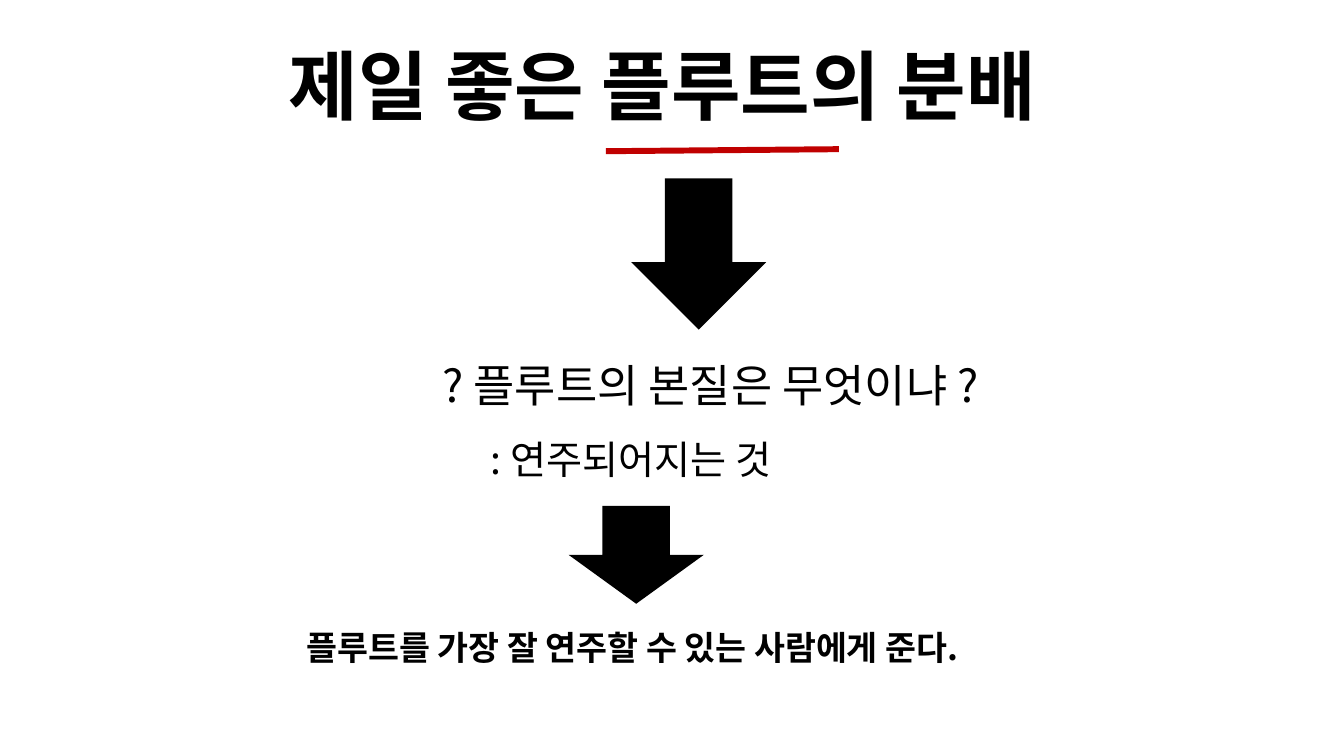
from pptx import Presentation
from pptx.dml.color import RGBColor
from pptx.enum.shapes import MSO_CONNECTOR, MSO_SHAPE
from pptx.enum.text import MSO_ANCHOR, PP_ALIGN
from pptx.oxml.ns import qn
from pptx.util import Inches, Pt
from lxml import etree

DOWN_ARROW = MSO_SHAPE.DOWN_ARROW
STRAIGHT = MSO_CONNECTOR.STRAIGHT
TOP, MIDDLE = MSO_ANCHOR.TOP, MSO_ANCHOR.MIDDLE
LEFT, CENTER = PP_ALIGN.LEFT, PP_ALIGN.CENTER

FONT = "Noto Sans CJK KR"
COLORS = {"ink": "000000", "underline": "C00000"}

prs = Presentation()
prs.slide_width, prs.slide_height = Inches(13.33), Inches(7.5)
slide = prs.slides.add_slide(prs.slide_layouts[6])
ink = RGBColor.from_string(COLORS["ink"])

# Title, question, answer and conclusion
statements = [
    ("제일 좋은 플루트의 분배", (0.82, 0.17, 11.5, 1.45), MIDDLE,
     {"alignment": CENTER, "line_spacing": 0.9}, {"size": Pt(54), "bold": True}),
    ("? 플루트의 본질은 무엇이냐 ?", (4.29, 3.5, 6.63, 0.64), TOP,
     {"alignment": LEFT}, {"size": Pt(32), "bold": False}),
    (": 연주되어지는 것", (4.77, 4.27, 4.08, 0.57), TOP,
     {"alignment": LEFT}, {"size": Pt(28), "bold": False}),
    ("플루트를 가장 잘 연주할 수 있는 사람에게 준다.", (2.94, 6.17, 7.74, 0.5), TOP,
     {"alignment": LEFT}, {"size": Pt(24), "bold": True}),
]
for wording, box, anchor, paragraph_format, font_format in statements:
    frame = slide.shapes.add_textbox(*map(Inches, box)).text_frame
    frame.word_wrap = True
    frame.vertical_anchor = anchor
    paragraph = frame.paragraphs[0]
    for key, value in paragraph_format.items():
        setattr(paragraph, key, value)
    run = paragraph.add_run()
    run.text = wording
    for key, value in font_format.items():
        setattr(run.font, key, value)
    run.font.color.rgb = ink
    run.font.name = FONT
    # Hangul takes the East Asian typeface
    etree.SubElement(run.font._element, qn("a:ea"), typeface=FONT)

# Red stroke under the flute in the title
underline = slide.shapes.add_connector(
    STRAIGHT, Inches(6.01), Inches(1.5), Inches(8.32), Inches(1.48))
underline.line.color.rgb = RGBColor.from_string(COLORS["underline"])
underline.line.width = Pt(4.25)
etree.SubElement(underline._element.spPr, qn("a:effectLst"))

# Arrows from title to question and from answer to conclusion
for left, top, height in [(6.26, 1.77, 1.5), (5.64, 5.02, 0.97)]:
    arrow = slide.shapes.add_shape(
        DOWN_ARROW, Inches(left), Inches(top), Inches(1.34), Inches(height))
    arrow.shadow.inherit = False
    arrow.fill.solid()
    arrow.fill.fore_color.rgb = ink
    arrow.line.fill.background()

prs.save("out.pptx")
